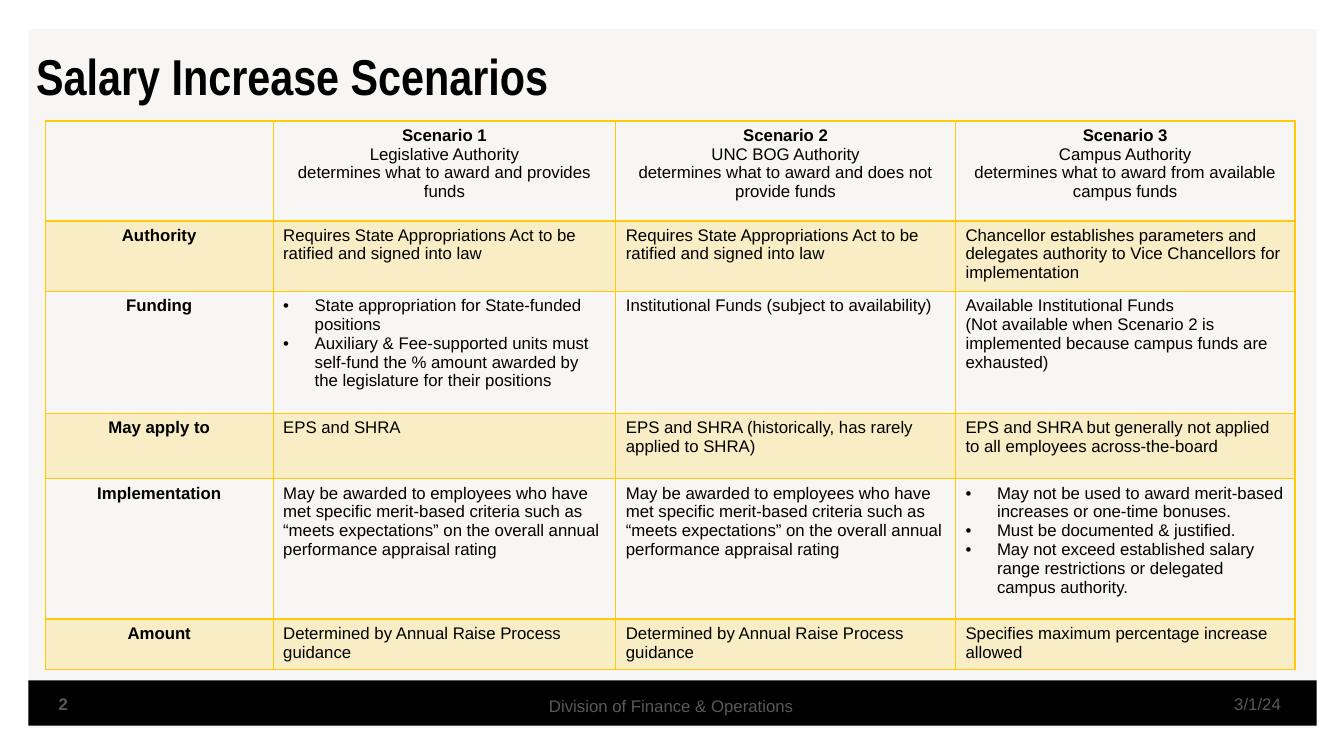
from dataclasses import dataclass

from lxml import etree
from pptx import Presentation
from pptx.dml.color import RGBColor
from pptx.dml.fill import FillFormat
from pptx.enum.shapes import MSO_SHAPE
from pptx.enum.text import MSO_ANCHOR, PP_ALIGN
from pptx.oxml.ns import qn
from pptx.slide import Slide
from pptx.table import _Cell
from pptx.text.text import TextFrame
from pptx.util import Pt

RECTANGLE = MSO_SHAPE.RECTANGLE
MIDDLE = MSO_ANCHOR.MIDDLE
LEFT, CENTER, RIGHT = PP_ALIGN.LEFT, PP_ALIGN.CENTER, PP_ALIGN.RIGHT

BLACK, GRAY, STONE, GOLD = "000000", "595959", "D0C6C0", "FFCA08"
BULLET = "•"
BULLET_INDENT = 22.5
COLUMN_WIDTHS = (162.7, 244.8, 242.6, 242.6)


@dataclass(frozen=True)
class Panel:
    left: float
    top: float
    width: float
    height: float
    color: str
    opacity: int = 100


@dataclass(frozen=True)
class Label:
    text: str
    left: float
    top: float
    width: float
    height: float
    size: float = 12
    font: str = "Arial"
    color: str = GRAY
    bold: bool = False
    align: PP_ALIGN = LEFT
    inset_x: float = 9.4
    inset_y: float = 5


@dataclass(frozen=True)
class Row:
    height: float
    heading: str
    entries: tuple[tuple[str, ...], ...]
    bulleted: tuple[int, ...] = ()
    shaded: bool = False


PANELS = (
    Panel(20.2, 20.9, 920.2, 499, STONE, 15),
    Panel(20.2, 486, 920.2, 32.4, BLACK),
)
LABELS = (
    Label("3/1/24", 775.4, 488.2, 149, 28.8, align=RIGHT),
    Label("Division of Finance & Operations", 216, 489.6, 527, 28.8, align=CENTER),
    Label("2", 32.4, 488.2, 147.6, 28.8, bold=True),
    Label("Salary Increase Scenarios", 18.7, 28.8, 917.3, 49.7, size=36,
          font="Arial Narrow", color=BLACK, bold=True, inset_x=7.2, inset_y=3.6),
)

APPROPRIATIONS = ("Requires State Appropriations Act to be ratified and signed into law",)
MERIT = ("May be awarded to employees who have met specific merit-based criteria such as "
         "“meets expectations” on the overall annual performance appraisal rating",)
RAISE_PROCESS = ("Determined by Annual Raise Process guidance",)

ROWS = (
    Row(71.3, "", (
        ("Scenario 1", "Legislative Authority",
         "determines what to award and provides funds"),
        ("Scenario 2", "UNC BOG Authority",
         "determines what to award and does not provide funds"),
        ("Scenario 3", "Campus Authority",
         "determines what to award from available campus funds"),
    )),
    Row(49.7, "Authority", (
        APPROPRIATIONS,
        APPROPRIATIONS,
        ("Chancellor establishes parameters and delegates authority to "
         "Vice Chancellors for implementation",),
    ), shaded=True),
    Row(87.1, "Funding", (
        ("State appropriation for State-funded positions",
         "Auxiliary & Fee-supported units must self-fund the % amount awarded by "
         "the legislature for their positions"),
        ("Institutional Funds (subject to availability)",),
        ("Available Institutional Funds",
         "(Not available when Scenario 2 is implemented because campus funds are exhausted)"),
    ), bulleted=(1,)),
    Row(46.8, "May apply to", (
        ("EPS and SHRA",),
        ("EPS and SHRA (historically, has rarely applied to SHRA)",),
        ("EPS and SHRA but generally not applied to all employees across-the-board",),
    ), shaded=True),
    Row(100.1, "Implementation", (
        MERIT,
        MERIT,
        ("May not be used to award merit-based increases or one-time bonuses.",
         "Must be documented & justified.",
         "May not exceed established salary range restrictions or delegated campus authority."),
    ), bulleted=(3,)),
    Row(36, "Amount", (
        RAISE_PROCESS,
        RAISE_PROCESS,
        ("Specifies maximum percentage increase allowed",),
    ), shaded=True),
)


def rgb(color: str) -> RGBColor:
    return RGBColor.from_string(color)


def set_fill(fill: FillFormat, color: str, opacity: int = 100) -> None:
    fill.solid()
    fill.fore_color.rgb = rgb(color)
    if opacity < 100:
        color_element = fill._xPr.find(qn("a:solidFill"))[0]
        etree.SubElement(color_element, qn("a:alpha"), val=str(opacity * 1000))


def write_text(frame: TextFrame, text: str, *, first: bool = True, size: float = 12,
               font: str = "Arial", color: str = BLACK, bold: bool = False,
               align: PP_ALIGN = LEFT, bulleted: bool = False) -> None:
    paragraph = frame.paragraphs[0] if first else frame.add_paragraph()
    paragraph.alignment = align
    if bulleted:
        properties = paragraph._p.get_or_add_pPr()
        properties.set("marL", str(Pt(BULLET_INDENT)))
        properties.set("indent", str(-Pt(BULLET_INDENT)))
        etree.SubElement(properties, qn("a:buFont"), typeface="Arial")
        etree.SubElement(properties, qn("a:buChar"), char=BULLET)
    run = paragraph.add_run()
    run.text = text
    run.font.size = Pt(size)
    run.font.name = font
    run.font.bold = bold
    run.font.color.rgb = rgb(color)


def add_panel(slide: Slide, panel: Panel) -> None:
    shape = slide.shapes.add_shape(RECTANGLE, Pt(panel.left), Pt(panel.top),
                                   Pt(panel.width), Pt(panel.height))
    shape.shadow.inherit = False
    shape.line.fill.background()
    set_fill(shape.fill, panel.color, panel.opacity)


def add_label(slide: Slide, label: Label) -> None:
    frame = slide.shapes.add_textbox(Pt(label.left), Pt(label.top),
                                     Pt(label.width), Pt(label.height)).text_frame
    frame.word_wrap = True
    frame.vertical_anchor = MIDDLE
    frame.margin_left = frame.margin_right = Pt(label.inset_x)
    frame.margin_top = frame.margin_bottom = Pt(label.inset_y)
    write_text(frame, label.text, size=label.size, font=label.font, color=label.color,
               bold=label.bold, align=label.align)


def set_borders(cell: _Cell, top: float, bottom: float) -> None:
    properties = cell._tc.get_or_add_tcPr()
    for side, width in (("L", 1), ("R", 1), ("T", top), ("B", bottom)):
        line = etree.SubElement(properties, qn(f"a:ln{side}"), w=str(Pt(width)))
        solid = etree.SubElement(line, qn("a:solidFill"))
        etree.SubElement(solid, qn("a:srgbClr"), val=GOLD)


def add_scenario_table(slide: Slide) -> None:
    table = slide.shapes.add_table(
        len(ROWS), len(COLUMN_WIDTHS), Pt(32.4), Pt(86.4),
        Pt(sum(COLUMN_WIDTHS)), Pt(sum(row.height for row in ROWS))).table
    table.first_row = table.horz_banding = False
    for column, width in zip(table.columns, COLUMN_WIDTHS):
        column.width = Pt(width)
    for row_index, row in enumerate(ROWS):
        table.rows[row_index].height = Pt(row.height)
        is_header = row_index == 0
        for column_index, lines in enumerate(((row.heading,), *row.entries)):
            cell = table.cell(row_index, column_index)
            set_borders(cell, top=2 if row_index == 1 else 1, bottom=2 if is_header else 1)
            if row.shaded:
                set_fill(cell.fill, GOLD, 20)
            else:
                cell.fill.background()
            is_heading = column_index == 0
            for line_index, text in enumerate(lines):
                if text:
                    write_text(cell.text_frame, text, first=line_index == 0,
                               bold=is_heading or (is_header and line_index == 0),
                               align=CENTER if is_header or is_heading else LEFT,
                               bulleted=column_index in row.bulleted)


def main() -> None:
    presentation = Presentation()
    presentation.slide_width, presentation.slide_height = Pt(960), Pt(540)
    slide = presentation.slides.add_slide(presentation.slide_layouts[6])
    for panel in PANELS:
        add_panel(slide, panel)
    for label in LABELS:
        add_label(slide, label)
    add_scenario_table(slide)
    presentation.save("out.pptx")


if __name__ == "__main__":
    main()
